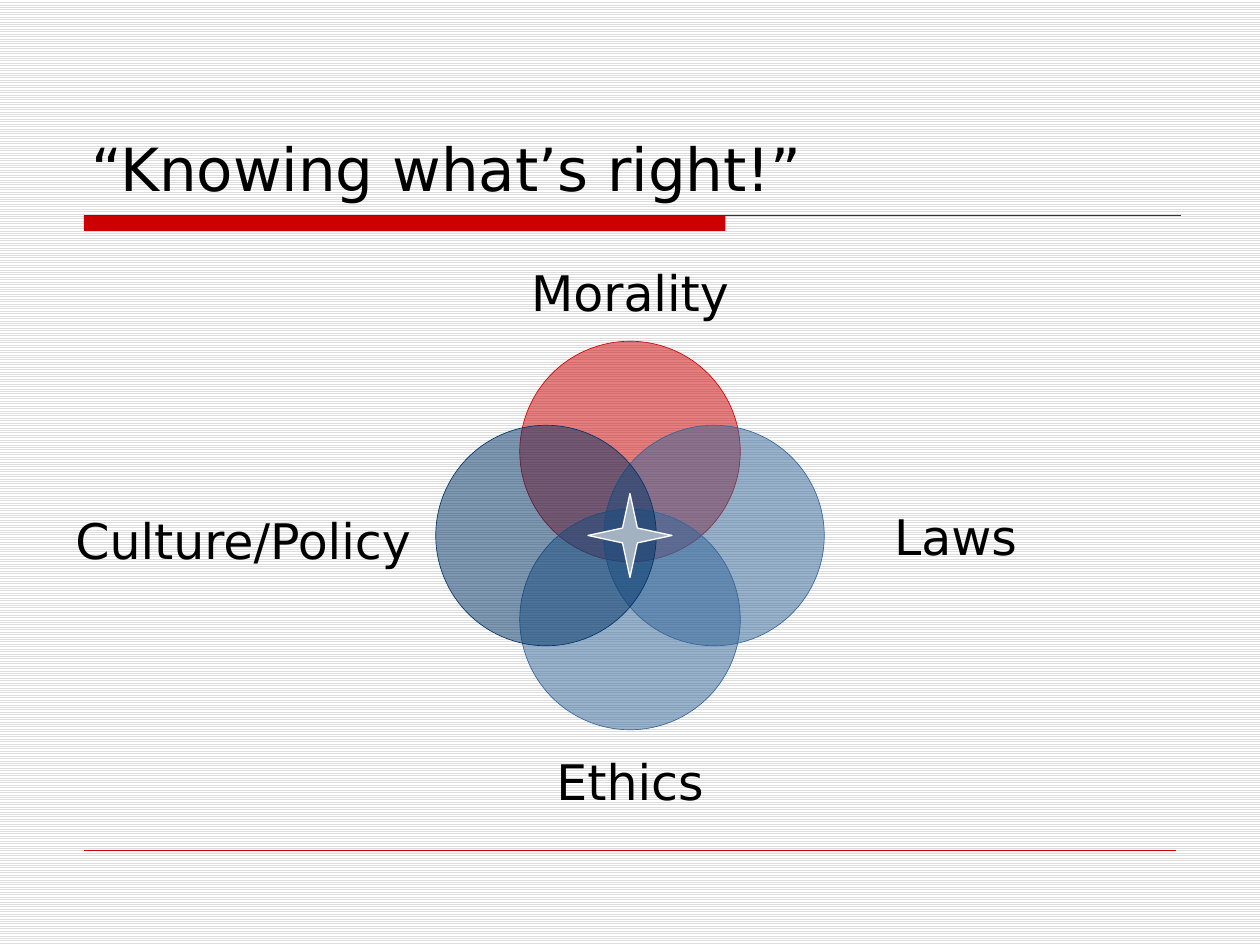
import pptx
import pptx.util
import pptx.dml.color
import pptx.enum.dml
import pptx.enum.shapes
import pptx.enum.text
import pptx.oxml.ns
import lxml.etree

Pt = pptx.util.Pt
SHAPES = pptx.enum.shapes.MSO_SHAPE
ANCHOR = pptx.enum.text.MSO_ANCHOR
ALIGN = pptx.enum.text.PP_ALIGN


def paint(color_format, color):
    color_format.rgb = pptx.dml.color.RGBColor.from_string(color)


def write(box, text, size, align, anchor):
    frame = box.text_frame
    frame.vertical_anchor = anchor
    para = frame.paragraphs[0]
    para.alignment = align
    span = para.add_run()
    span.text = text
    span.font.size = Pt(size)
    span.font.name = "DejaVu Sans"
    paint(span.font.color, "000000")


deck = pptx.Presentation()
deck.slide_width, deck.slide_height = Pt(720), Pt(540)
page = deck.slides.add_slide(deck.slide_layouts[5])
background = page.background.fill
background.patterned()
background.pattern = pptx.enum.dml.MSO_PATTERN.LIGHT_HORIZONTAL
paint(background.fore_color, "DDDDDD")
paint(background.back_color, "FFFFFF")

title = page.shapes.title
title.left, title.top, title.width, title.height = Pt(45), Pt(24), Pt(630), Pt(96)
write(title, "“Knowing what’s right!”", 34, ALIGN.LEFT, ANCHOR.BOTTOM)

bar = page.shapes.add_shape(SHAPES.RECTANGLE, Pt(48), Pt(123), Pt(366.5), Pt(9))
bar.shadow.inherit = False
bar.fill.solid()
paint(bar.fill.fore_color, "CC0000")
bar.line.fill.background()

for right, y, color, weight in [(675, 123, "333333", 0.75), (672, 486, "CC0000", 0.25)]:
    rule = page.shapes.add_connector(
        pptx.enum.shapes.MSO_CONNECTOR.STRAIGHT, Pt(48), Pt(y), Pt(right), Pt(y))
    paint(rule.line.color, color)
    rule.line.width = Pt(weight)
    lxml.etree.SubElement(rule.element.spPr, pptx.oxml.ns.qn("a:effectLst"))

center_x, center_y, diameter, offset = 360, 306, 126, 48
circles = [
    (0, -1, "CC0000"),
    (1, 0, "336699"),
    (0, 1, "336699"),
    (-1, 0, "003366"),
]
diagram = page.shapes.add_group_shape()
for across, down, color in circles:
    circle = diagram.shapes.add_shape(
        SHAPES.OVAL,
        Pt(center_x + across * offset - diameter / 2),
        Pt(center_y + down * offset - diameter / 2),
        Pt(diameter), Pt(diameter))
    circle.shadow.inherit = False
    circle.fill.solid()
    paint(circle.fill.fore_color, color)
    solid = circle.element.spPr.find(pptx.oxml.ns.qn("a:solidFill"))
    lxml.etree.SubElement(solid[0], pptx.oxml.ns.qn("a:alpha"), val="50000")
    paint(circle.line.color, color)
    circle.line.width = Pt(0.37)

star_size = 48
star = diagram.shapes.add_shape(
    SHAPES.STAR_4_POINT, Pt(center_x - star_size / 2), Pt(center_y - star_size / 2),
    Pt(star_size), Pt(star_size))
star.adjustments[0] = 0.125
star.shadow.inherit = False
star.fill.solid()
paint(star.fill.fore_color, "A3B2C1")
paint(star.line.color, "FFFFFF")
star.line.width = Pt(0.75)

for text, left, top in [("Morality", 297, 151), ("Laws", 483, 290), ("Ethics", 297, 430)]:
    label = diagram.shapes.add_textbox(Pt(left), Pt(top), Pt(diameter), Pt(32))
    frame = label.text_frame
    frame.word_wrap = False
    frame.margin_left = frame.margin_right = frame.margin_top = frame.margin_bottom = 0
    write(label, text, 28, ALIGN.CENTER, ANCHOR.MIDDLE)

policy = page.shapes.add_textbox(Pt(36), Pt(288), Pt(211), Pt(41))
policy.text_frame.word_wrap = False
policy.text_frame.auto_size = pptx.enum.text.MSO_AUTO_SIZE.SHAPE_TO_FIT_TEXT
write(policy, "Culture/Policy", 28, ALIGN.LEFT, ANCHOR.TOP)

deck.save("out.pptx")
